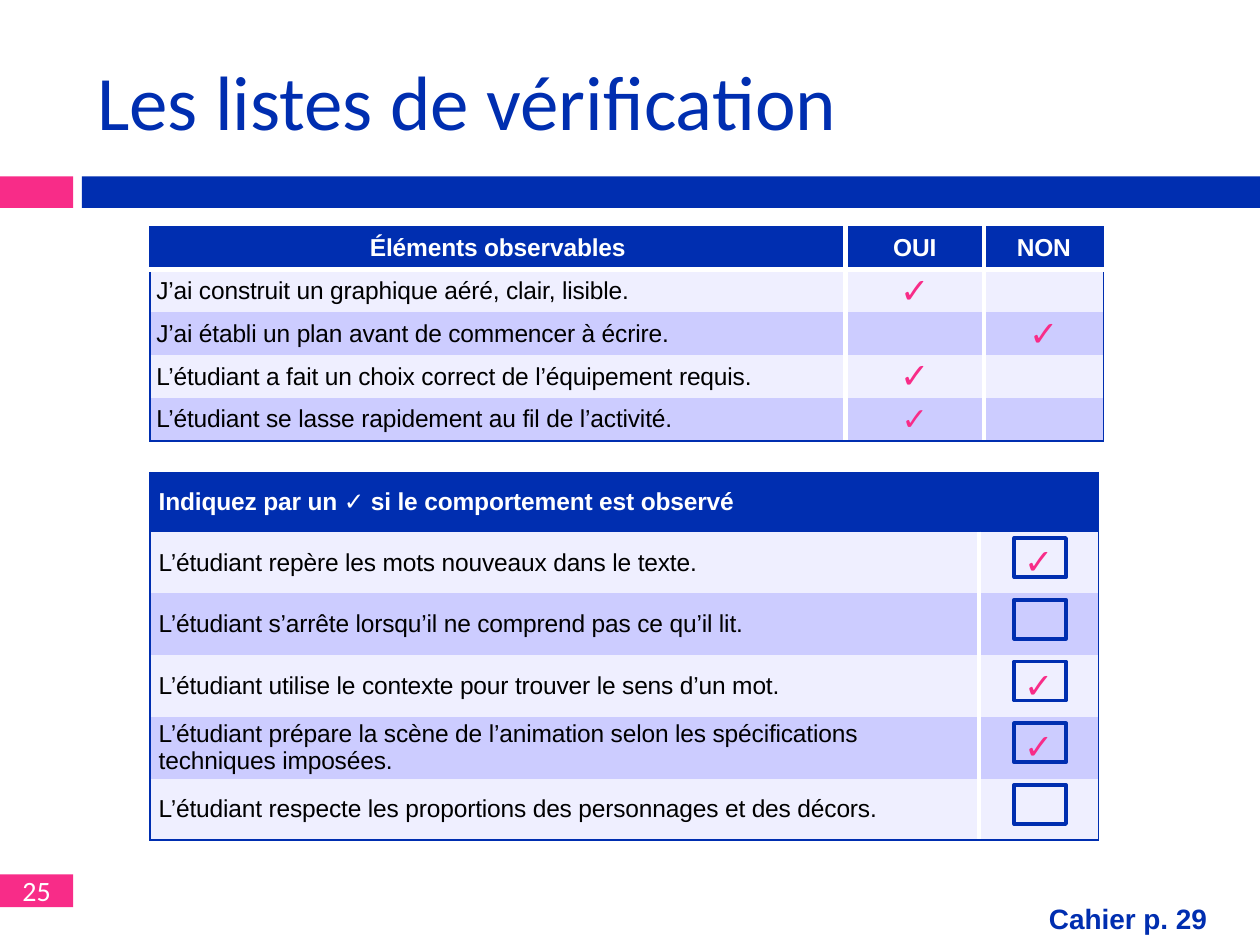
import dataclasses

import lxml.etree
import pptx
import pptx.dml.color
import pptx.enum.shapes
import pptx.enum.text
import pptx.oxml.ns
import pptx.util

Inches = pptx.util.Inches
Pt = pptx.util.Pt
ALIGN = pptx.enum.text.PP_ALIGN
MIDDLE = pptx.enum.text.MSO_ANCHOR.MIDDLE
CHECK = "✓"


def rgb(value):
    return pptx.dml.color.RGBColor.from_string(value)


@dataclasses.dataclass(frozen=True)
class Theme:
    blue: str = "002EB0"
    pink: str = "F82C88"
    white: str = "FFFFFF"
    black: str = "000000"
    bands: tuple = ("EFEFFF", "CCCCFF")
    heading_font: str = "Calibri"
    body_font: str = "Arial"
    title_size: int = 44
    label_size: int = 16
    table_size: int = 14
    check_size: int = 20
    small_check_size: int = 18
    thin: float = 1
    thick: float = 3


class SlideBuilder:
    def __init__(self, slide, theme):
        self.slide = slide
        self.theme = theme

    def add_text(self, frame, text, color, align=ALIGN.LEFT, spacing=None, **font):
        paragraph = frame.paragraphs[0]
        paragraph.alignment = align
        run = paragraph.add_run()
        run.text = text
        for name, value in font.items():
            setattr(run.font, name, value)
        run.font.color.rgb = rgb(color)
        if spacing is not None:
            run._r.get_or_add_rPr().set("spc", str(spacing))

    def title(self, text, box):
        holder = self.slide.shapes.title
        for name, value in zip(("left", "top", "width", "height"), box):
            setattr(holder, name, Inches(value))
        holder.text_frame.vertical_anchor = MIDDLE
        self.add_text(holder.text_frame, text, self.theme.blue,
                      size=Pt(self.theme.title_size), name=self.theme.heading_font)

    def rectangle(self, box, fill=None, line=None):
        shape = self.slide.shapes.add_shape(
            pptx.enum.shapes.MSO_SHAPE.RECTANGLE, *map(Inches, box))
        shape.shadow.inherit = False
        if fill:
            shape.fill.solid()
            shape.fill.fore_color.rgb = rgb(fill)
        else:
            shape.fill.background()
        if line:
            shape.line.color.rgb = rgb(line)
            shape.line.width = Pt(2.25)
        else:
            shape.line.fill.background()
        return shape

    def label(self, box, text, fill, color, align, margin=0.05, **font):
        frame = self.rectangle(box, fill).text_frame
        settings = {"word_wrap": True, "vertical_anchor": MIDDLE,
                    "margin_top": Inches(margin), "margin_bottom": Inches(margin)}
        for name, value in settings.items():
            setattr(frame, name, value)
        self.add_text(frame, text, color, align, size=Pt(self.theme.label_size), **font)

    def borders(self, cell, edges):
        # Edges come in schema order: left, right, top, bottom
        properties = cell._tc.get_or_add_tcPr()
        for side, edge in zip("LRTB", edges):
            line = lxml.etree.SubElement(properties, pptx.oxml.ns.qn(f"a:ln{side}"))
            if edge is None:
                lxml.etree.SubElement(line, pptx.oxml.ns.qn("a:noFill"))
                continue
            color, width = edge
            line.set("w", str(Pt(width)))
            fill = lxml.etree.SubElement(line, pptx.oxml.ns.qn("a:solidFill"))
            lxml.etree.SubElement(fill, pptx.oxml.ns.qn("a:srgbClr")).set("val", color)

    def checklist(self, left, top, widths, heights, rows, margin, header_align, header_rule):
        theme = self.theme
        table = self.slide.shapes.add_table(
            len(rows), len(widths), Inches(left), Inches(top),
            Inches(sum(widths)), Inches(sum(heights))).table
        for column, width in zip(table.columns, widths):
            column.width = Inches(width)
        for table_row, height in zip(table.rows, heights):
            table_row.height = Inches(height)
        if len(rows[0]) == 1:
            table.cell(0, 0).merge(table.cell(0, len(widths) - 1))
        outer, inner = (theme.blue, theme.thin), (theme.white, theme.thick)
        rule = inner if header_rule else None
        for r, row in enumerate(rows):
            for c, text in enumerate(row):
                cell = table.cell(r, c)
                at_right = c == len(row) - 1
                self.borders(cell, (
                    inner if c else outer,
                    outer if at_right else inner,
                    outer if r == 0 else rule if r == 1 else None,
                    outer if r == len(rows) - 1 else rule if r == 0 else None))
                cell.fill.solid()
                cell.fill.fore_color.rgb = rgb(theme.bands[(r - 1) % 2] if r else theme.blue)
                settings = {"vertical_anchor": MIDDLE, "margin_top": 0, "margin_bottom": 0,
                            "margin_left": Inches(margin), "margin_right": Inches(margin)}
                for name, value in settings.items():
                    setattr(cell, name, value)
                if not text:
                    continue
                if r == 0:
                    color, align = theme.white, header_align
                elif text == CHECK:
                    color, align = theme.pink, ALIGN.CENTER
                else:
                    color, align = theme.black, ALIGN.LEFT
                size = theme.check_size if text == CHECK else theme.table_size
                self.add_text(cell.text_frame, text, color, align, spacing=-10, size=Pt(size),
                              name=theme.body_font, bold=r == 0 or text == CHECK)
        return table


def main():
    deck = pptx.Presentation()
    deck.slide_width, deck.slide_height = Inches(10), Inches(7.5)
    theme = Theme()
    page = SlideBuilder(deck.slides.add_slide(deck.slide_layouts[5]), theme)

    # Title, band and page number
    page.title("Les listes de vérification", (0.67, 0.25, 8.92, 1.08))
    page.rectangle((0, 1.4, 0.58, 0.25), theme.pink)
    page.rectangle((0.65, 1.4, 9.35, 0.25), theme.blue)
    page.label((0, 6.94, 0.58, 0.26), "25", theme.pink, theme.white, ALIGN.CENTER,
               margin=0, name=theme.heading_font)

    # Yes/no checklist
    yes_no = page.checklist(1.19, 1.8, (5.52, 1.1, 0.95), [0.34] * 5, [
        ("Éléments observables", "OUI", "NON"),
        ("J’ai construit un graphique aéré, clair, lisible.", CHECK, ""),
        ("J’ai établi un plan avant de commencer à écrire.", "", CHECK),
        ("L’étudiant a fait un choix correct de l’équipement requis.", CHECK, ""),
        ("L’étudiant se lasse rapidement au fil de l’activité.", CHECK, ""),
    ], margin=0.05, header_align=ALIGN.CENTER, header_rule=True)
    last_check = yes_no.cell(4, 1).text_frame.paragraphs[0].runs[0]
    last_check.font.size = Pt(theme.small_check_size)

    # Observed behaviour checklist, with a tick box on each row
    behaviours = [
        ("L’étudiant repère les mots nouveaux dans le texte.", CHECK),
        ("L’étudiant s’arrête lorsqu’il ne comprend pas ce qu’il lit.", ""),
        ("L’étudiant utilise le contexte pour trouver le sens d’un mot.", CHECK),
        ("L’étudiant prépare la scène de l’animation selon les spécifications "
         "techniques imposées.", CHECK),
        ("L’étudiant respecte les proportions des personnages et des décors.", ""),
    ]
    pitch = 0.49
    page.checklist(1.19, 3.75, (6.58, 0.95), [0.47] + [pitch] * len(behaviours),
                   [("Indiquez par un ✓ si le comportement est observé",)] + behaviours,
                   margin=0.07, header_align=ALIGN.LEFT, header_rule=False)
    for index in range(len(behaviours)):
        page.rectangle((8.05, 4.27 + index * pitch, 0.41, 0.31), line=theme.blue)

    # Workbook reference
    page.label((7.5, 7.1, 2.18, 0.37), "Cahier p. 29", theme.white, theme.blue,
               ALIGN.RIGHT, name=theme.body_font, bold=True)

    deck.save("out.pptx")


if __name__ == "__main__":
    main()
